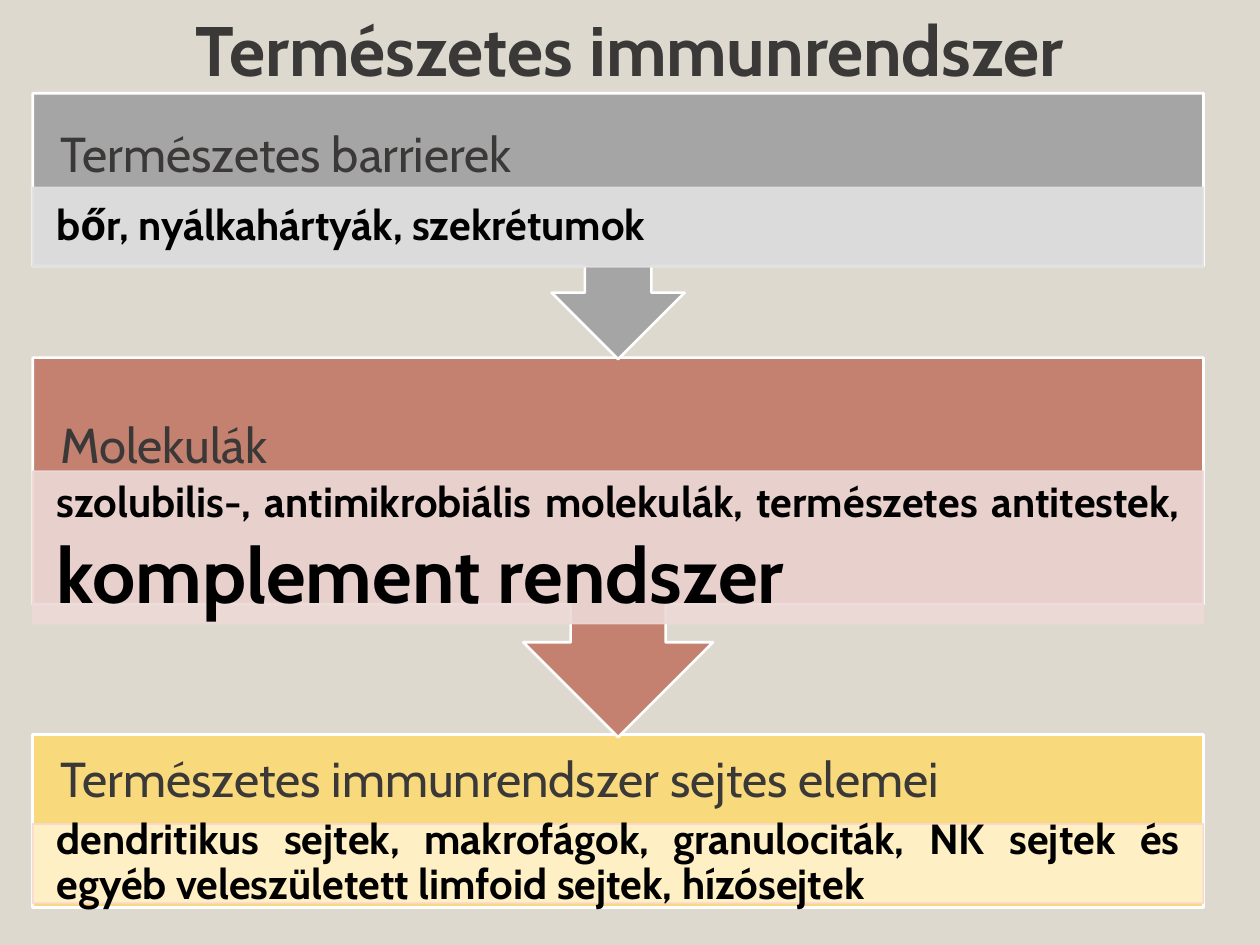
import pptx
import pptx.util
import pptx.dml.color
import pptx.enum.shapes
import pptx.enum.text
import pptx.oxml.ns
import lxml.etree

Cm = pptx.util.Cm
Pt = pptx.util.Pt
RGB = pptx.dml.color.RGBColor.from_string
SHAPE = pptx.enum.shapes.MSO_SHAPE
ANCHOR = pptx.enum.text.MSO_ANCHOR
ALIGN = pptx.enum.text.PP_ALIGN

THEME = {
    "font": "Cabin", "background": "DED9CF", "heading": "3B3838", "body": "000000",
    "border": "FFFFFF", "title_size": 40, "heading_size": 28, "body_size": 24, "key_size": 44,
}
LEFT, WIDTH = 0.66, 23.6
TITLE = "Természetes immunrendszer"

SECTIONS = [
    {"heading": "Természetes immunrendszer sejtes elemei",
     "details": [("dendritikus sejtek, makrofágok, granulociták, NK sejtek és "
                  "egyéb veleszületett limfoid sejtek, hízósejtek", "body_size")],
     "callout": False, "fill": "FFD966", "opacity": 79,
     "band": "FFF2CC", "band_line": "F8D7CE", "spacing": 0.9,
     "frame_y": (14.81, 3.48), "heading_y": (14.81, 1.88), "band_y": (16.61, 1.6)},
    {"heading": "Molekulák",
     "details": [("szolubilis-, antimikrobiális molekulák, természetes antitestek, ", "body_size"),
                 ("komplement rendszer", "key_size")],
     "callout": True, "fill": "C48170", "opacity": 100,
     "band": "EDD9D7", "band_line": "EDD9D7", "spacing": 1.0,
     "frame_y": (7.21, 7.65), "heading_y": (8.15, 1.75), "band_y": (9.5, 3.07)},
    {"heading": "Természetes barrierek",
     "details": [("bőr, nyálkahártyák, szekrétumok", "body_size")],
     "callout": True, "fill": "A5A5A5", "opacity": 100,
     "band": "E1E1E1", "band_line": "E1E1E1", "spacing": 0.9,
     "frame_y": (1.88, 5.36), "heading_y": (2.54, 1.22), "band_y": (3.78, 1.6)},
]


def set_opacity(s, tag, percent):
    qn = pptx.oxml.ns.qn
    holder = s._element.spPr.find(qn(tag))
    color = next(holder.iter(qn("a:srgbClr")))
    lxml.etree.SubElement(color, qn("a:alpha")).set("val", str(percent * 1000))


def add_block(slide, kind, y, fill, line, line_width, opacity, line_opacity):
    top, height = y
    s = slide.shapes.add_shape(kind, Cm(LEFT), Cm(top), Cm(WIDTH), Cm(height))
    s.shadow.inherit = False
    s.fill.solid()
    s.fill.fore_color.rgb = RGB(fill)
    s.line.color.rgb = RGB(line)
    s.line.width = Pt(line_width)
    for tag, percent in (("a:solidFill", opacity), ("a:ln", line_opacity)):
        if percent < 100:
            set_opacity(s, tag, percent)
    return s


def add_text(slide, box, runs, color, bold, align, spacing=1.0, anchor=ANCHOR.MIDDLE, insets=(0.25, 0.13)):
    tf = slide.shapes.add_textbox(*map(Cm, box)).text_frame
    tf.word_wrap = True
    tf.vertical_anchor = anchor
    tf.margin_left = tf.margin_right = Cm(insets[0])
    tf.margin_top = tf.margin_bottom = Cm(insets[1])
    p = tf.paragraphs[0]
    p.alignment = align
    p.line_spacing = spacing
    for text, size in runs:
        r = p.add_run()
        r.text = text
        r.font.name = THEME["font"]
        r.font.size = Pt(THEME[size])
        r.font.bold = bold
        r.font.color.rgb = RGB(THEME[color])


def add_section(slide, section):
    kind = SHAPE.UP_ARROW_CALLOUT if section["callout"] else SHAPE.RECTANGLE
    frame = add_block(slide, kind, section["frame_y"], section["fill"],
                      THEME["border"], 1.5, section["opacity"], 100)
    if section["callout"]:
        frame.rotation = 180
    top, height = section["heading_y"]
    add_text(slide, (LEFT, top, WIDTH, height), [(section["heading"], "heading_size")],
             "heading", False, ALIGN.JUSTIFY, 0.9, insets=(0.56, 0.56))
    add_block(slide, SHAPE.RECTANGLE, section["band_y"], section["band"],
              section["band_line"], 1, 90, 90)
    top, height = section["band_y"]
    add_text(slide, (LEFT, top, WIDTH, height), section["details"],
             "body", True, ALIGN.JUSTIFY, section["spacing"], insets=(0.48, 0.08))


def main():
    prs = pptx.Presentation()
    prs.slide_width, prs.slide_height = Cm(25.4), Cm(19.05)
    slide = prs.slides.add_slide(prs.slide_layouts[6])
    slide.background.fill.solid()
    slide.background.fill.fore_color.rgb = RGB(THEME["background"])
    for section in SECTIONS:
        add_section(slide, section)
    add_text(slide, (1.6, 0, 22.2, 1.96), [(TITLE, "title_size")],
             "heading", True, ALIGN.CENTER, anchor=ANCHOR.TOP)
    prs.save("out.pptx")


if __name__ == "__main__":
    main()
